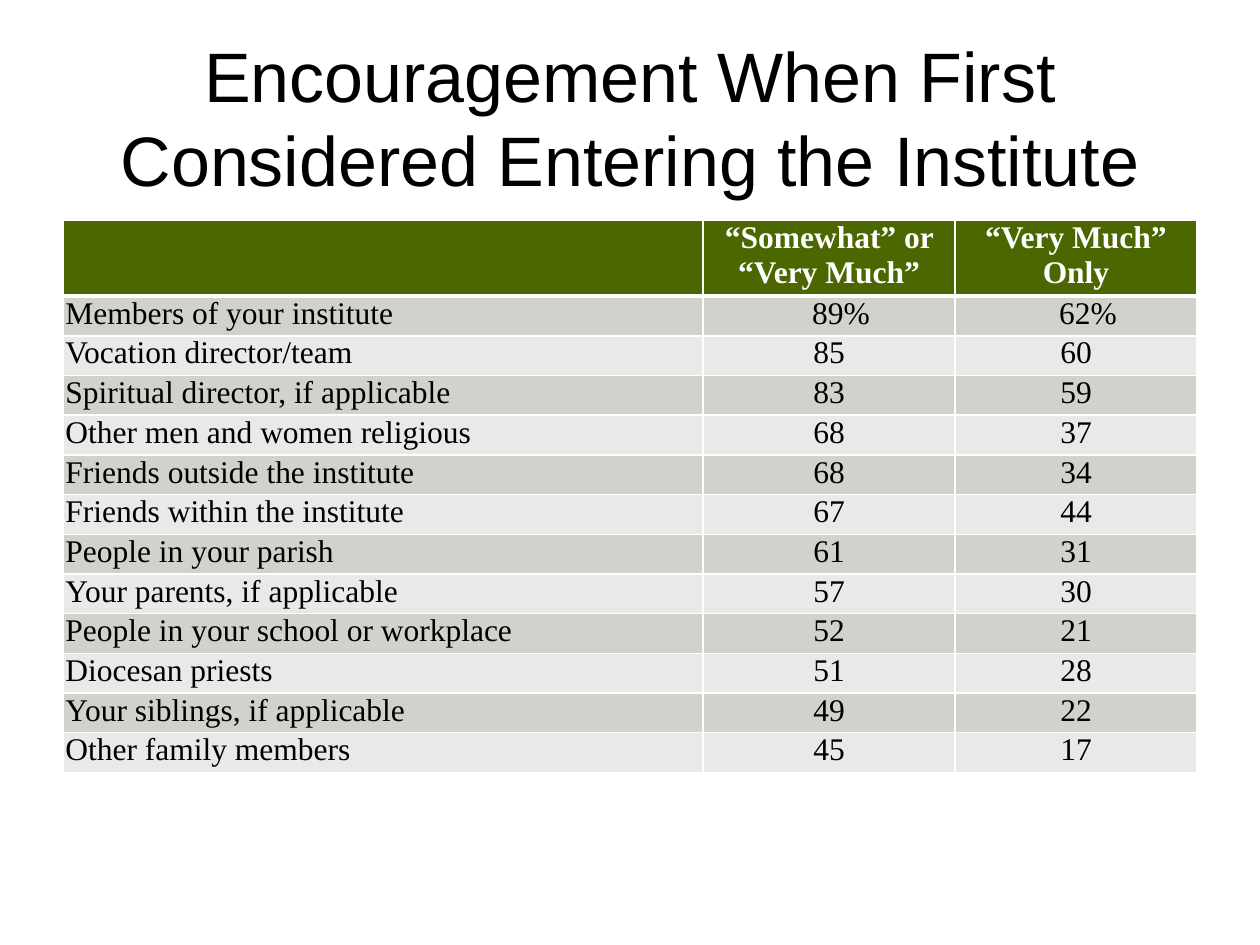
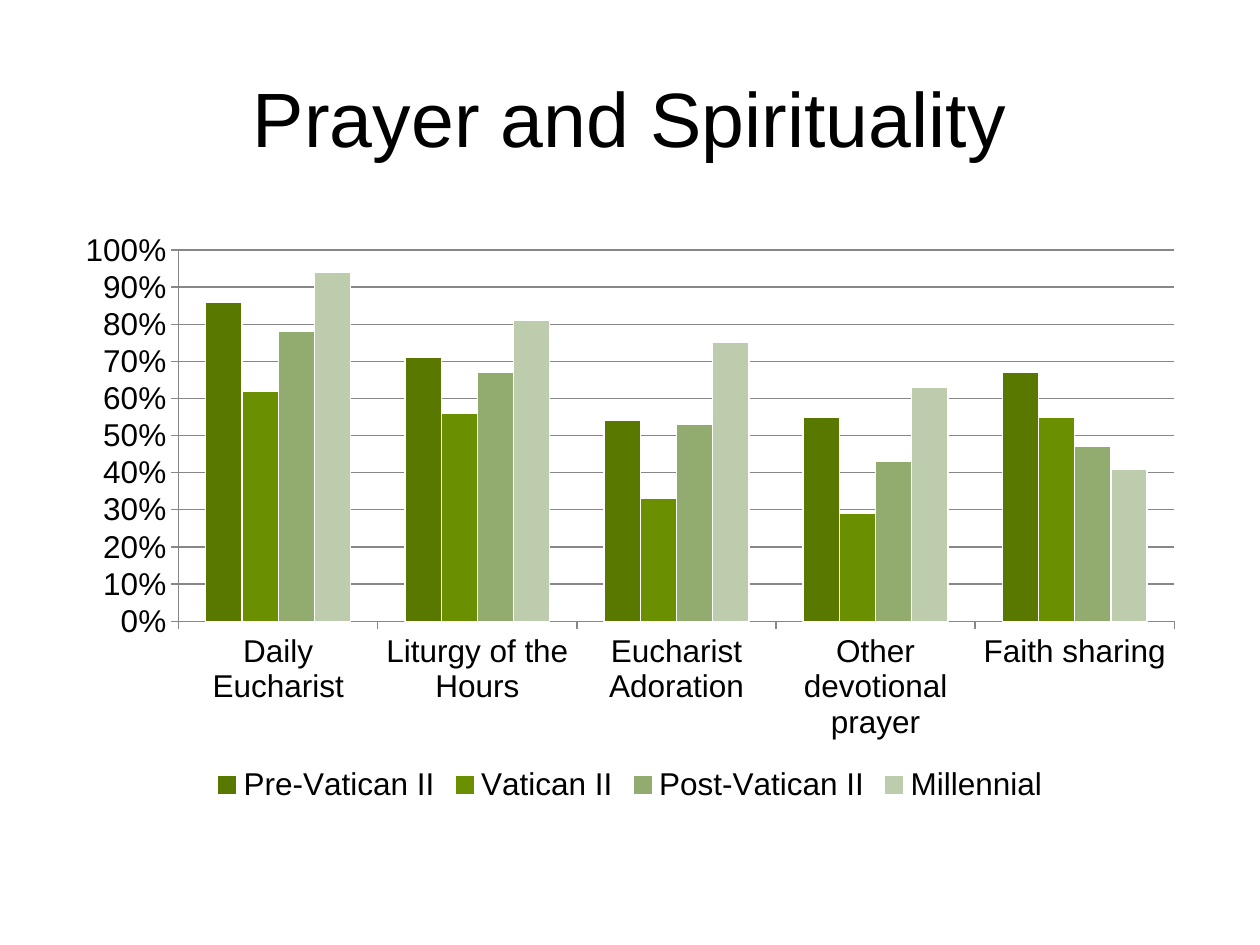
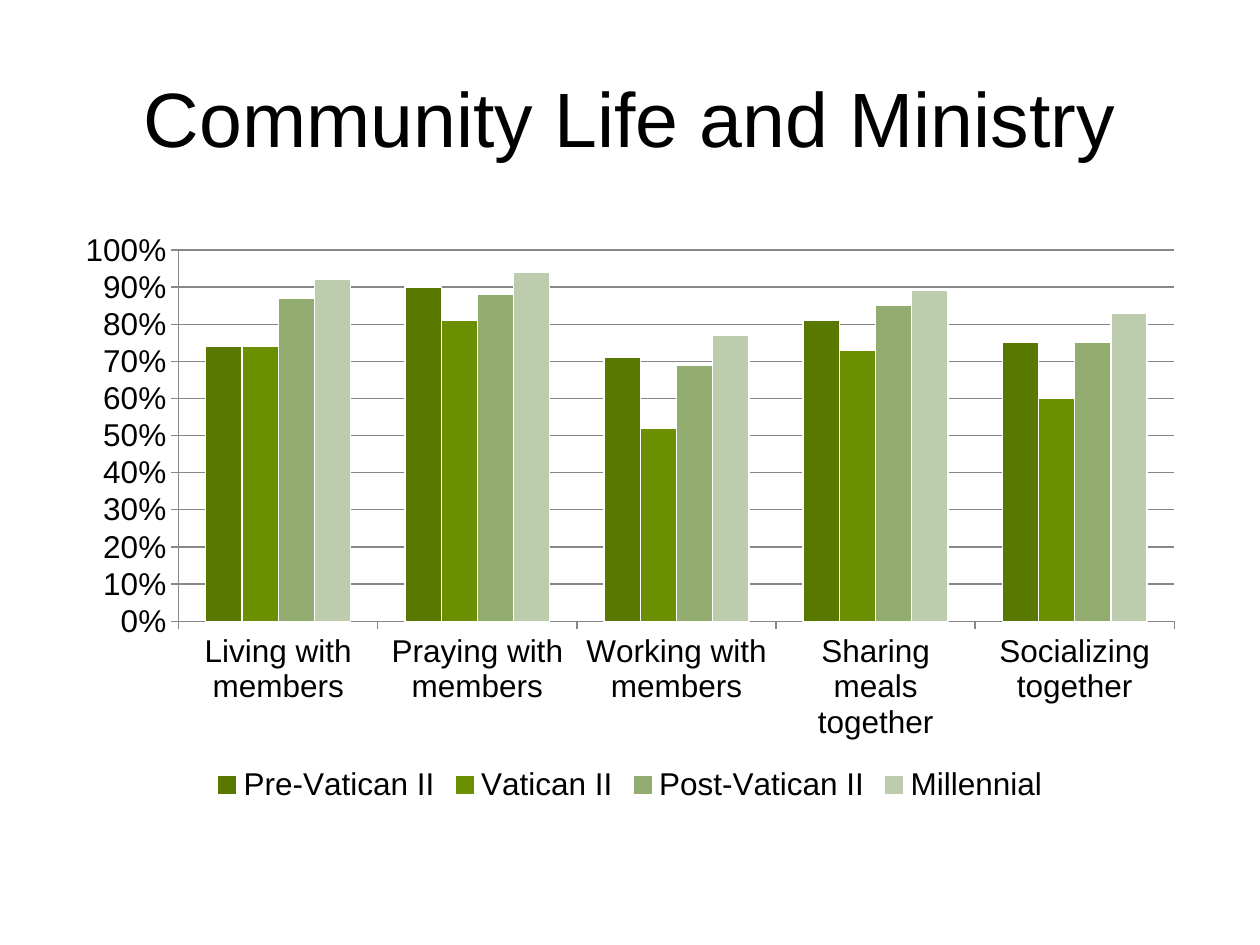
import pptx
import pptx.chart.data
import pptx.dml.color
import pptx.enum.chart
import pptx.enum.text
import pptx.oxml
import pptx.oxml.ns
import pptx.util

Inches = pptx.util.Inches
Pt = pptx.util.Pt
RGBColor = pptx.dml.color.RGBColor
CENTER = pptx.enum.text.PP_ALIGN.CENTER
LEFT = pptx.enum.text.PP_ALIGN.LEFT

# Shared colours, fonts and boxes (left, top, width, height)
BLACK = RGBColor(0x00, 0x00, 0x00)
WHITE = RGBColor(0xFF, 0xFF, 0xFF)
HEADER_GREEN = RGBColor(0x4C, 0x66, 0x00)
ROW_BANDS = (RGBColor(0xD0, 0xD3, 0xCC), RGBColor(0xE9, 0xEA, 0xE7))
AXIS_GRAY = RGBColor(0x87, 0x87, 0x87)
GENERATION_COLORS = (
    RGBColor(0x58, 0x78, 0x00),
    RGBColor(0x6A, 0x8F, 0x00),
    RGBColor(0x92, 0xAC, 0x6F),
    RGBColor(0xBE, 0xCC, 0xAE),
)
HEADING_FONT = "Arial"
TABLE_FONT = "Times New Roman"
TITLE_BOX = (0.5, 0.3, 9, 1.25)
TABLE_BOX = (0.5, 1.75, 9, 4.25)
CHART_BOX = (0.5, 1.75, 9, 4.67)

# Content
GENERATIONS = ("Pre-Vatican II", "Vatican II", "Post-Vatican II", "Millennial")
ENCOURAGEMENT = (
    ("", "“Somewhat” or “Very Much”", "“Very Much” Only"),
    ("Members of your institute", "89%", "62%"),
    ("Vocation director/team", "85", "60"),
    ("Spiritual director, if applicable", "83", "59"),
    ("Other men and women religious", "68", "37"),
    ("Friends outside the institute", "68", "34"),
    ("Friends within the institute", "67", "44"),
    ("People in your parish", "61", "31"),
    ("Your parents, if applicable", "57", "30"),
    ("People in your school or workplace", "52", "21"),
    ("Diocesan priests", "51", "28"),
    ("Your siblings, if applicable", "49", "22"),
    ("Other family members", "45", "17"),
)
PRAYER = {
    "Daily Eucharist": (0.86, 0.62, 0.78, 0.94),
    "Liturgy of the Hours": (0.71, 0.56, 0.67, 0.81),
    "Eucharist Adoration": (0.54, 0.33, 0.53, 0.75),
    "Other devotional prayer": (0.55, 0.29, 0.43, 0.63),
    "Faith sharing": (0.67, 0.55, 0.47, 0.41),
}
COMMUNITY = {
    "Living with members": (0.74, 0.74, 0.87, 0.92),
    "Praying with members": (0.9, 0.81, 0.88, 0.94),
    "Working with members": (0.71, 0.52, 0.69, 0.77),
    "Sharing meals together": (0.81, 0.73, 0.85, 0.89),
    "Socializing together": (0.75, 0.6, 0.75, 0.83),
}


def add_run(paragraph, text, font_name, size, color, bold=False):
    run = paragraph.add_run()
    run.text = text
    run.font.name = font_name
    run.font.size = Pt(size)
    run.font.bold = bold
    run.font.color.rgb = color


def add_titled_slide(prs, title, size=44):
    slide = prs.slides.add_slide(prs.slide_layouts[6])
    heading = slide.shapes.add_textbox(*map(Inches, TITLE_BOX)).text_frame
    heading.word_wrap = True
    heading.vertical_anchor = pptx.enum.text.MSO_ANCHOR.MIDDLE
    heading.paragraphs[0].alignment = CENTER
    add_run(heading.paragraphs[0], title, HEADING_FONT, size, BLACK)
    return slide


def set_borders(cell, top, bottom):
    properties = cell._tc.get_or_add_tcPr()
    for side, points in (("L", 1), ("R", 1), ("T", top), ("B", bottom)):
        properties.append(pptx.oxml.parse_xml(
            f'<a:ln{side} {pptx.oxml.ns.nsdecls("a")} w="{Pt(points)}">'
            f'<a:solidFill><a:srgbClr val="{WHITE}"/></a:solidFill></a:ln{side}>'))


def add_encouragement_table(slide, box, rows):
    left, top, width, height = box
    answer_widths = (2, 1.92)
    widths = (width - sum(answer_widths), *answer_widths)
    header_height = 0.47
    row_height = (height - header_height) / (len(rows) - 1)

    table = slide.shapes.add_table(
        len(rows), len(widths), *map(Inches, box)).table
    for column, column_width in zip(table.columns, widths):
        column.width = Inches(column_width)

    for r, row in enumerate(rows):
        is_header = r == 0
        table.rows[r].height = Inches(header_height if is_header else row_height)
        for c, text in enumerate(row):
            cell = table.cell(r, c)
            set_borders(cell, top=3 if r == 1 else 1, bottom=3 if is_header else 1)
            cell.fill.solid()
            cell.fill.fore_color.rgb = (
                HEADER_GREEN if is_header else ROW_BANDS[(r - 1) % 2])
            # The percent sign hangs to the right of the centred digits
            cell.margin_left = Inches(0.21 if text.endswith("%") else 0.02)
            cell.margin_right = Inches(0.02)
            cell.margin_top = cell.margin_bottom = 0
            paragraph = cell.text_frame.paragraphs[0]
            paragraph.alignment = CENTER if c else LEFT
            if text:
                add_run(paragraph, text, TABLE_FONT, 18,
                        WHITE if is_header else BLACK, is_header)


def add_generation_chart(slide, box, shares):
    data = pptx.chart.data.CategoryChartData(number_format="0%")
    data.categories = list(shares)
    for generation, values in zip(GENERATIONS, zip(*shares.values())):
        data.add_series(generation, values)
    chart = slide.shapes.add_chart(
        pptx.enum.chart.XL_CHART_TYPE.COLUMN_CLUSTERED,
        *map(Inches, box), data).chart
    chart.has_title = False
    chart.font.name = HEADING_FONT
    chart.font.size = Pt(18)
    chart.font.color.rgb = BLACK

    # Columns
    plot = chart.plots[0]
    plot.vary_by_categories = False
    plot.gap_width = 150
    plot.overlap = 0
    for series, color in zip(plot.series, GENERATION_COLORS):
        series.format.fill.solid()
        series.format.fill.fore_color.rgb = color
        series.format.line.color.rgb = WHITE
        series.format.line.width = Pt(0.75)

    # Axes and gridlines
    share_axis = chart.value_axis
    share_axis.minimum_scale = 0
    share_axis.maximum_scale = 1
    share_axis.major_unit = 0.1
    share_axis.has_major_gridlines = True
    share_axis.tick_labels.number_format = "0%"
    share_axis.tick_labels.number_format_is_linked = False
    for axis in (chart.category_axis, share_axis):
        axis.major_tick_mark = pptx.enum.chart.XL_TICK_MARK.OUTSIDE
    for lines in (chart.category_axis, share_axis, share_axis.major_gridlines):
        lines.format.line.color.rgb = AXIS_GRAY
        lines.format.line.width = Pt(0.75)

    # Legend
    chart.has_legend = True
    chart.legend.position = pptx.enum.chart.XL_LEGEND_POSITION.BOTTOM
    chart.legend.include_in_layout = False


def main():
    prs = pptx.Presentation()
    prs.slide_width = Inches(10)
    prs.slide_height = Inches(7.5)

    encouragement = add_titled_slide(
        prs, "Encouragement When First Considered Entering the Institute", 40)
    add_encouragement_table(encouragement, TABLE_BOX, ENCOURAGEMENT)

    for title, shares in (("Prayer and Spirituality", PRAYER),
                          ("Community Life and Ministry", COMMUNITY)):
        add_generation_chart(add_titled_slide(prs, title), CHART_BOX, shares)

    prs.save("out.pptx")


if __name__ == "__main__":
    main()
